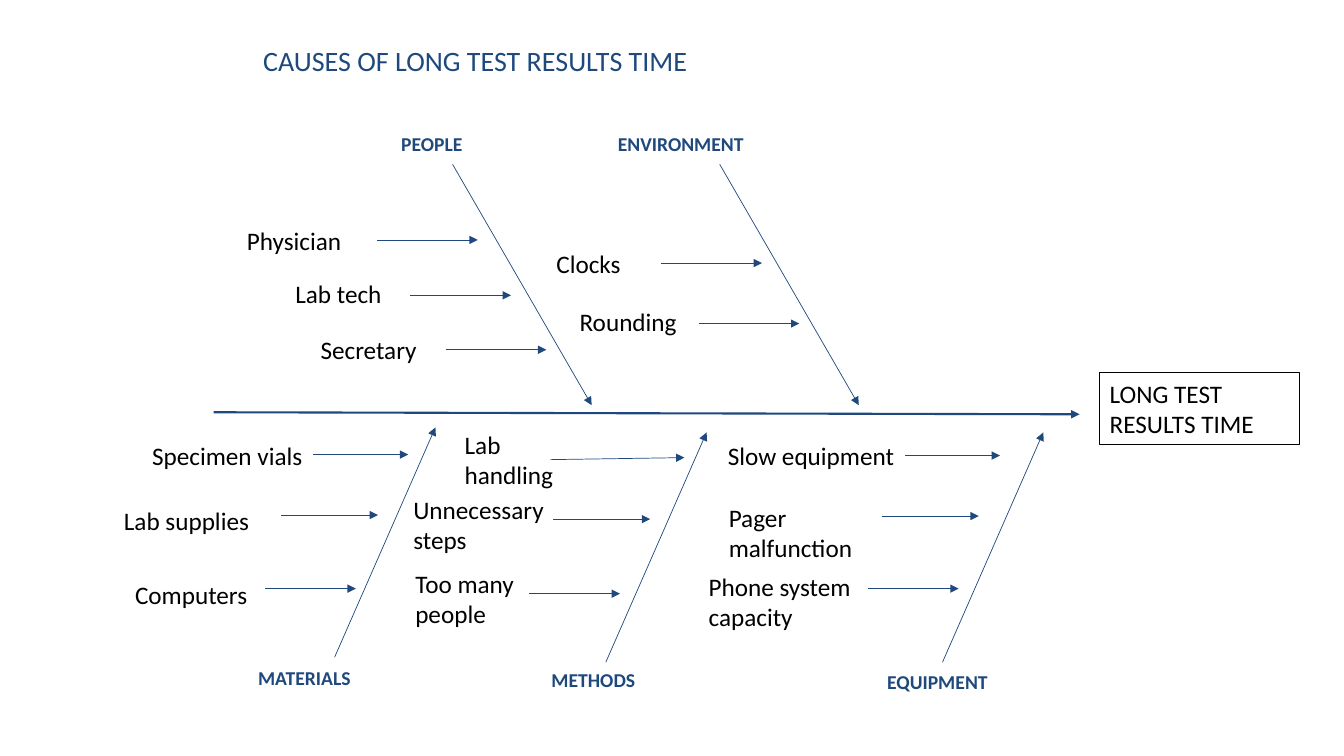
from dataclasses import dataclass

from lxml.etree import SubElement
from pptx import Presentation
from pptx.dml.color import RGBColor
from pptx.enum.shapes import MSO_CONNECTOR as Link, MSO_SHAPE as Preset
from pptx.enum.text import MSO_ANCHOR as Anchor, PP_ALIGN as Align
from pptx.oxml.ns import qn
from pptx.util import Inches, Pt

NAVY = RGBColor(0x1F, 0x49, 0x7D)
BLACK = RGBColor(0, 0, 0)
COLUMNS, ROWS = 133.33, 75  # grid cells across and down the slide
CELL = Inches(0.1)


def cells(*counts):
    return [round(count * CELL) for count in counts]


def write(frame, text, size=18, color=BLACK, bold=False, anchor=Anchor.MIDDLE,
          insets=(0.5, 0.5), font="Calibri"):
    """Put one left-aligned paragraph in a text frame."""
    frame.word_wrap = True
    frame.vertical_anchor = anchor
    side, edge = cells(*insets)
    frame.margin_left = frame.margin_right = side
    frame.margin_top = frame.margin_bottom = edge
    para = frame.paragraphs[0]
    para.alignment = Align.LEFT
    span = para.add_run()
    span.text = text
    span.font.name, span.font.size, span.font.bold = font, Pt(size), bold
    span.font.color.rgb = color


@dataclass
class Cause:
    text: str
    place: tuple  # left, top, width, height
    arrow: tuple  # left, top, length
    rise: float = 0


@dataclass
class Bone:
    heading: str
    place: tuple
    rib_start: tuple
    rib_step: tuple
    causes: list


UPPER_STEP = (13.8, 23.9)
LOWER_STEP = (10, -22.8)
BONES = [
    Bone("PEOPLE", (39.3, 12.6, 10.3, 3.4), (44.9, 16.3), UPPER_STEP, [
        Cause("Physician", (24, 21.9, 13.4, 4), (37.4, 23.8, 10)),
        Cause("Lab tech", (28.8, 27.6, 11.8, 3), (40.7, 29.3, 10)),
        Cause("Secretary", (31.3, 33.2, 12.2, 3), (44.2, 34.7, 10)),
    ]),
    Bone("ENVIRONMENT", (60.8, 12.6, 21.4, 3.4), (71.4, 16.3), UPPER_STEP, [
        Cause("Clocks", (54.7, 24.6, 10, 3), (65.6, 26.1, 10)),
        Cause("Rounding", (57, 29.9, 11.5, 4), (69.3, 32.1, 10)),
    ]),
    Bone("MATERIALS", (25.1, 65.6, 15.2, 3), (33.2, 65.2), LOWER_STEP, [
        Cause("Specimen vials", (14.6, 42.2, 17.6, 6), (31.1, 45.1, 9.4)),
        Cause("Lab supplies", (11.8, 48.7, 16, 5.8), (27.9, 51.1, 9.6)),
        Cause("Computers", (12.9, 55.4, 12.3, 7.1), (26.3, 58.4, 9)),
    ]),
    Bone("METHODS", (54.2, 65.8, 15.2, 3), (60.1, 65.7), LOWER_STEP, [
        Cause("Lab handling", (45.6, 42.5, 10, 6.2), (54.6, 45.6, 13.3), 0.2),
        Cause("Unnecessary steps", (40.5, 49.6, 14.1, 4.8), (54.9, 51.5, 9.6)),
        Cause("Too many people", (40.7, 55.8, 13, 7.1), (52.5, 58.9, 9)),
    ]),
    Bone("EQUIPMENT", (87.5, 66, 15.2, 3), (93.5, 65.7), LOWER_STEP, [
        Cause("Slow equipment", (71.7, 42.1, 18.1, 6.2), (89.8, 45.2, 9.4)),
        Cause("Pager malfunction", (71.8, 50.3, 18.8, 5.1), (87.5, 51.2, 9.6)),
        Cause("Phone system capacity", (69.8, 56.4, 17, 6.6), (86.1, 58.4, 9)),
    ]),
]


class FishboneSlide:
    def __init__(self, deck):
        self.accent = NAVY
        self.page = deck.slides.add_slide(deck.slide_layouts[5])

    def title(self, text, place):
        box = self.page.shapes.title
        box.left, box.top, box.width, box.height = cells(*place)
        write(box.text_frame, text, size=20, color=self.accent, anchor=Anchor.TOP)

    def label(self, text, place, **style):
        box = self.page.shapes.add_textbox(*cells(*place))
        write(box.text_frame, text, **style)

    def arrow(self, start, step, weight=0.5):
        end = start[0] + step[0], start[1] + step[1]
        line = self.page.shapes.add_connector(Link.STRAIGHT, *cells(*start, *end))
        line.line.color.rgb = self.accent
        line.line.width = Pt(weight)
        properties = line.line._get_or_add_ln()
        SubElement(properties, qn("a:tailEnd"), type="triangle")
        SubElement(line._element.spPr, qn("a:effectLst"))

    def effect(self, text, place):
        box = self.page.shapes.add_shape(Preset.RECTANGLE, *cells(*place))
        box.shadow.inherit = False
        box.fill.background()
        box.line.color.rgb = BLACK
        box.line.width = Pt(0.75)
        write(box.text_frame, text, insets=(1, 0.5))

    def bone(self, bone):
        self.label(bone.heading, bone.place, size=14, color=self.accent,
                   bold=True, anchor=Anchor.TOP)
        self.arrow(bone.rib_start, bone.rib_step)
        for cause in bone.causes:
            left, top, length = cause.arrow
            self.label(cause.text, cause.place)
            self.arrow((left, top), (length, -cause.rise))


def main():
    deck = Presentation()
    deck.slide_width, deck.slide_height = cells(COLUMNS, ROWS)
    fishbone = FishboneSlide(deck)

    # Title
    fishbone.title("CAUSES OF LONG TEST RESULTS TIME", (25.6, 3.8, 80.8, 4.4))

    # Spine and the effect it leads to
    fishbone.arrow((21.2, 40.9), (85.9, 0.2), weight=1.5)
    fishbone.effect("LONG TEST RESULTS TIME", (109.1, 37, 19.8, 7.1))

    # Ribs with their causes
    for bone in BONES:
        fishbone.bone(bone)

    deck.save("out.pptx")


if __name__ == "__main__":
    main()
